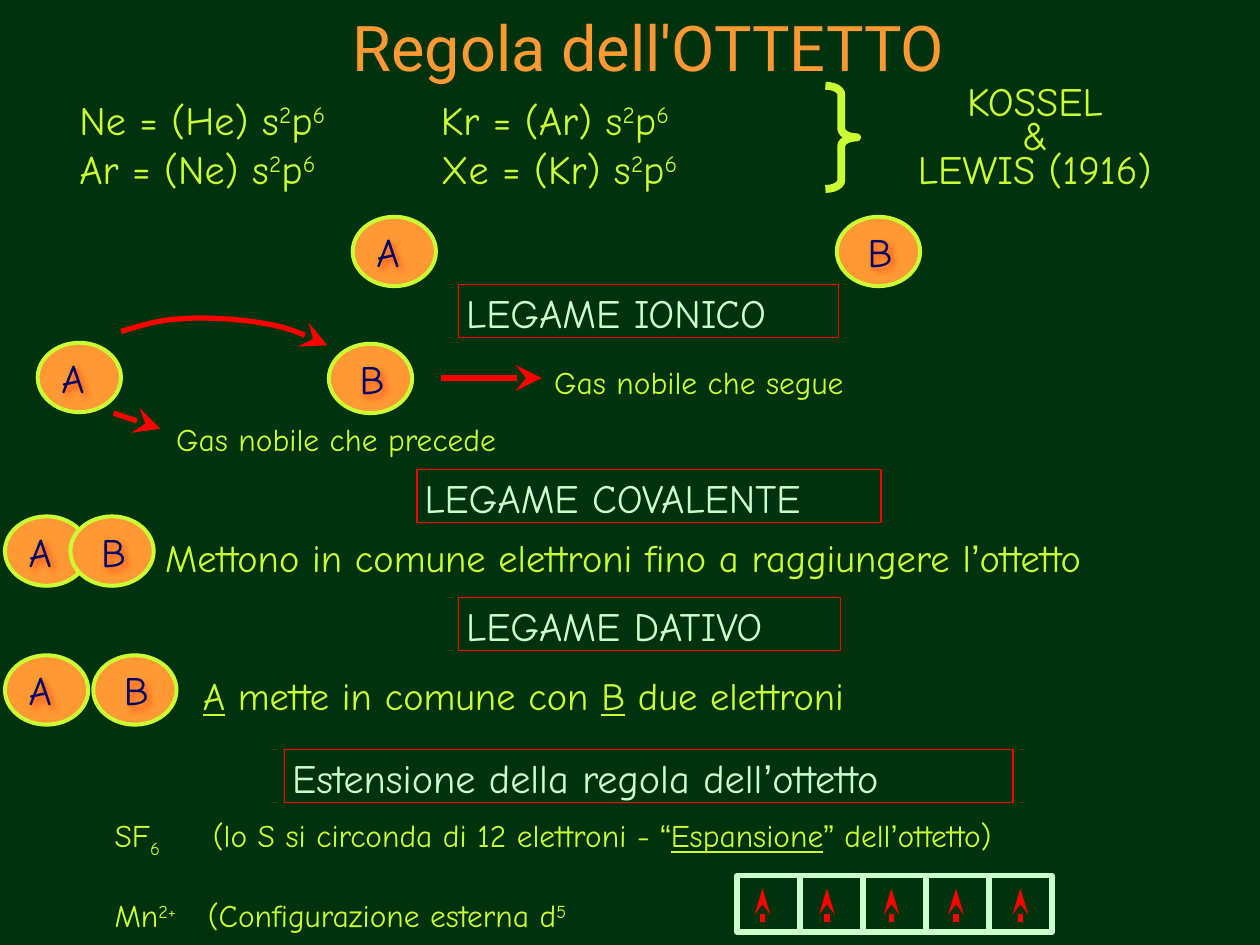
from dataclasses import dataclass

import lxml.etree
import pptx
import pptx.dml.color
import pptx.enum.shapes
import pptx.enum.text
import pptx.oxml.ns
import pptx.util

Cm, Pt = pptx.util.Cm, pptx.util.Pt
ShapeKind = pptx.enum.shapes.MSO_SHAPE
Align = pptx.enum.text.PP_ALIGN
qn = pptx.oxml.ns.qn


@dataclass(frozen=True)
class Theme:
    background: str = "00320E"
    lime: str = "CCFF33"
    mint: str = "CCFFCC"
    orange: str = "FF9933"
    red: str = "FF0000"
    navy: str = "000066"
    hand: str = "Comic Neue"
    plain: str = "Arial"
    heading: str = "Roboto"
    title: float = 36
    large: float = 23
    medium: float = 22
    small: float = 18


THEME = Theme()


@dataclass(frozen=True)
class Run:
    text: str
    baseline: int = 0  # percent of the type size
    underline: bool = False
    font: str = THEME.hand


@dataclass(frozen=True)
class Line:
    runs: list[Run]
    tab: float = 0  # cm
    align: Align = Align.LEFT
    spacing: float = 1.0
    before: float = 0  # points


@dataclass(frozen=True)
class Box:
    left: float
    top: float
    width: float
    height: float

    def lengths(self) -> list[int]:
        return [Cm(v) for v in (self.left, self.top, self.width, self.height)]


@dataclass(frozen=True)
class Atom:
    symbol: str
    left: float
    top: float


def rgb(colour: str):
    return pptx.dml.color.RGBColor.from_string(colour)


def sub(parent, tag: str, **attributes: str):
    return lxml.etree.SubElement(parent, qn(tag), attributes)


def write(frame, lines: list[Line], size: float, colour: str) -> None:
    for number, line in enumerate(lines):
        paragraph = frame.add_paragraph() if number else frame.paragraphs[0]
        paragraph.alignment = line.align
        paragraph.line_spacing = line.spacing
        paragraph.space_before = Pt(line.before)
        if line.tab:
            stops = sub(paragraph._p.get_or_add_pPr(), "a:tabLst")
            sub(stops, "a:tab", pos=str(Cm(line.tab)), algn="l")
        for part in line.runs:
            run = paragraph.add_run()
            run.text = part.text
            run.font.name, run.font.size = part.font, Pt(size)
            run.font.color.rgb = rgb(colour)
            if part.underline:
                run.font.underline = True
            if part.baseline:
                run.font._element.set("baseline", str(part.baseline * 1000))


def fit(frame) -> None:
    frame.word_wrap = True
    frame.auto_size = pptx.enum.text.MSO_AUTO_SIZE.SHAPE_TO_FIT_TEXT
    frame.vertical_anchor = pptx.enum.text.MSO_ANCHOR.TOP
    frame.margin_left = frame.margin_right = Cm(0.15)
    frame.margin_top = frame.margin_bottom = Cm(0.08)


def add_text(shapes, box: Box, lines: list[Line], size: float, colour: str = THEME.lime):
    label = shapes.add_textbox(*box.lengths())
    fit(label.text_frame)
    write(label.text_frame, lines, size, colour)
    return label


def add_figure(shapes, kind, box: Box, line: str, weight: float, fill: str = ""):
    figure = shapes.add_shape(kind, *box.lengths())
    figure.shadow.inherit = False
    if fill:
        figure.fill.solid()
        figure.fill.fore_color.rgb = rgb(fill)
    else:
        figure.fill.background()
    figure.line.color.rgb = rgb(line)
    figure.line.width = Pt(weight)
    return figure


def add_atom(shapes, atom: Atom) -> None:
    add_figure(shapes, ShapeKind.OVAL, Box(atom.left, atom.top, 1.68, 1.4),
               THEME.lime, 2.25, THEME.orange)
    offset, width = {"A": (0.33, 0.91), "B": (0.47, 0.84)}[atom.symbol]
    letter = add_text(shapes, Box(atom.left + offset, atom.top + 0.13, width, 1.07),
                      [Line([Run(atom.symbol)])], THEME.large, THEME.navy)
    # Soft red shadow under the letter
    effects = sub(letter._element.spPr, "a:effectLst")
    shadow = sub(effects, "a:outerShdw", blurRad="50800", dist="38100", dir="2700000")
    sub(sub(shadow, "a:srgbClr", val=THEME.red), "a:alpha", val="50000")


def add_heading(shapes, box: Box, runs: list[Run]) -> None:
    frame = add_figure(shapes, ShapeKind.RECTANGLE, box, THEME.red, 0.75).text_frame
    fit(frame)
    write(frame, [Line(runs)], THEME.large, THEME.mint)


def style_arrow(arrow, head_width: str = "lg") -> None:
    arrow.line.color.rgb = rgb(THEME.red)
    arrow.line.width = Pt(3)
    sub(arrow.line._get_or_add_ln(), "a:tailEnd", type="stealth", w=head_width, len="lg")


def add_arrow(shapes, start: tuple, end: tuple, head_width: str = "lg") -> None:
    arrow = shapes.add_connector(pptx.enum.shapes.MSO_CONNECTOR.STRAIGHT,
                                 *(Cm(v) for v in start + end))
    style_arrow(arrow, head_width)
    sub(arrow._element.spPr, "a:effectLst")


def add_curved_arrow(shapes, start: tuple, curves: list[tuple], steps: int = 10) -> None:
    points, origin = [], start
    for curve in curves:
        controls = (origin, *curve)
        for step in range(1, steps + 1):
            t = step / steps
            weights = ((1 - t) ** 3, 3 * t * (1 - t) ** 2, 3 * t * t * (1 - t), t ** 3)
            points.append(tuple(Cm(sum(w * c[axis] for w, c in zip(weights, controls)))
                                for axis in (0, 1)))
        origin = curve[-1]
    builder = shapes.build_freeform(Cm(start[0]), Cm(start[1]))
    builder.add_line_segments(points, close=False)
    transfer = builder.convert_to_shape()
    transfer.shadow.inherit = False
    transfer.fill.background()
    style_arrow(transfer)


def noble_gas(name: str, core: str) -> list[Run]:
    return [Run(f"{name} = ({core}) s"), Run("2", 30), Run("p"), Run("6", 30)]


def main() -> None:
    deck = pptx.Presentation()
    deck.slide_width, deck.slide_height = Cm(25.4), Cm(19.05)
    slide = deck.slides.add_slide(deck.slide_layouts[5])
    slide.background.fill.solid()
    slide.background.fill.fore_color.rgb = rgb(THEME.background)
    shapes = slide.shapes
    apostrophe = Run("’", font=THEME.plain)

    # Title
    title = shapes.title
    title.left, title.top, title.width, title.height = Box(1.52, 0, 23.11, 1.85).lengths()
    title.text_frame.auto_size = pptx.enum.text.MSO_AUTO_SIZE.NONE
    title.text_frame.vertical_anchor = pptx.enum.text.MSO_ANCHOR.MIDDLE
    write(title.text_frame, [Line([Run("Regola dell'OTTETTO", font=THEME.heading)],
                                  align=Align.CENTER)], THEME.title, THEME.orange)

    # Noble gas configurations and authors
    gases = [(("Ne", "He"), ("Kr", "Ar")), (("Ar", "Ne"), ("Xe", "Kr"))]
    add_text(shapes, Box(1.45, 1.85, 15.27, 1.98),
             [Line(noble_gas(*first) + [Run("\t")] + noble_gas(*second), tab=7.29)
              for first, second in gases], THEME.large)
    brace = add_figure(shapes, ShapeKind.RIGHT_BRACE, Box(16.64, 1.73, 0.64, 2.08),
                       THEME.lime, 4.5)
    brace.adjustments[0], brace.adjustments[1] = 0.27, 0.5
    add_text(shapes, Box(17.73, 1.73, 6.27, 2.08),
             [Line([Run(text)], align=Align.CENTER, spacing=0.7)
              for text in ("KOSSEL", "&", "LEWIS (1916)")], THEME.large)

    # Atoms: separate, ionic, covalent and dative pairs
    for atom in (Atom("A", 7.11, 4.37), Atom("B", 16.87, 4.37),
                 Atom("A", 0.76, 6.91), Atom("B", 6.63, 6.93),
                 Atom("A", 0.1, 10.41), Atom("B", 1.42, 10.41),
                 Atom("A", 0.1, 13.21), Atom("B", 1.88, 13.21)):
        add_atom(shapes, atom)

    # Framed headings
    for left, top, width, runs in (
            (9.25, 5.74, 7.65, [Run("LEGAME IONICO")]),
            (8.41, 9.47, 9.35, [Run("LEGAME COVALENTE")]),
            (9.25, 12.04, 7.7, [Run("LEGAME DATIVO")]),
            (5.74, 15.11, 14.68, [Run("Estensione della regola dell"), apostrophe,
                                  Run("ottetto")])):
        add_heading(shapes, Box(left, top, width, 1.07), runs)

    # Ionic bond: electron transfer and resulting noble gases
    add_curved_arrow(shapes, (2.44, 6.68), [((2.64, 6.63), (3.12, 6.45), (3.61, 6.43)),
                                            ((4.09, 6.38), (4.88, 6.43), (5.38, 6.53)),
                                            ((5.89, 6.6), (6.35, 6.86), (6.6, 6.96))])
    add_arrow(shapes, (8.89, 7.62), (10.92, 7.62))
    add_arrow(shapes, (2.29, 8.33), (3.23, 8.64))
    add_text(shapes, Box(11.02, 7.24, 7.14, 0.89), [Line([Run("Gas nobile che segue")])],
             THEME.small)
    add_text(shapes, Box(3.4, 8.38, 7.9, 0.89), [Line([Run("Gas nobile che precede")])],
             THEME.small)

    # Covalent and dative explanations
    add_text(shapes, Box(3.18, 10.69, 22.2, 1.02),
             [Line([Run("Mettono in comune elettroni fino a raggiungere l"), apostrophe,
                    Run("ottetto")])], THEME.medium)
    add_text(shapes, Box(3.94, 13.46, 15.44, 1.02),
             [Line([Run("A", underline=True), Run(" mette in comune con "),
                    Run("B", underline=True), Run(" due elettroni")])], THEME.medium)

    # Extensions of the rule
    add_text(shapes, Box(2.16, 16.38, 19.63, 2.44), [
        Line([Run("SF"), Run("6", -25), Run("\t(lo S si circonda di 12 elettroni - "),
              Run("“", font=THEME.plain), Run("Espansione", underline=True),
              Run("”", font=THEME.plain), Run(" dell"), apostrophe, Run("ottetto)")],
             tab=1.98),
        Line([Run("Mn"), Run("2+", 30), Run("\t(Configurazione esterna d"), Run("5", 30)],
             tab=1.88, before=21)], THEME.small)

    # Five d orbitals, one electron each
    orbitals = shapes.add_group_shape().shapes
    for index in range(5):
        add_figure(orbitals, ShapeKind.RECTANGLE,
                   Box(14.86 + 1.27 * index, 17.65, 1.27, 1.14),
                   THEME.mint, 3, THEME.background)
    for index in range(5):
        spin = 15.37 + 1.3 * index
        add_arrow(orbitals, (spin, 18.59), (spin, 17.91), "med")

    deck.save("out.pptx")


if __name__ == "__main__":
    main()
